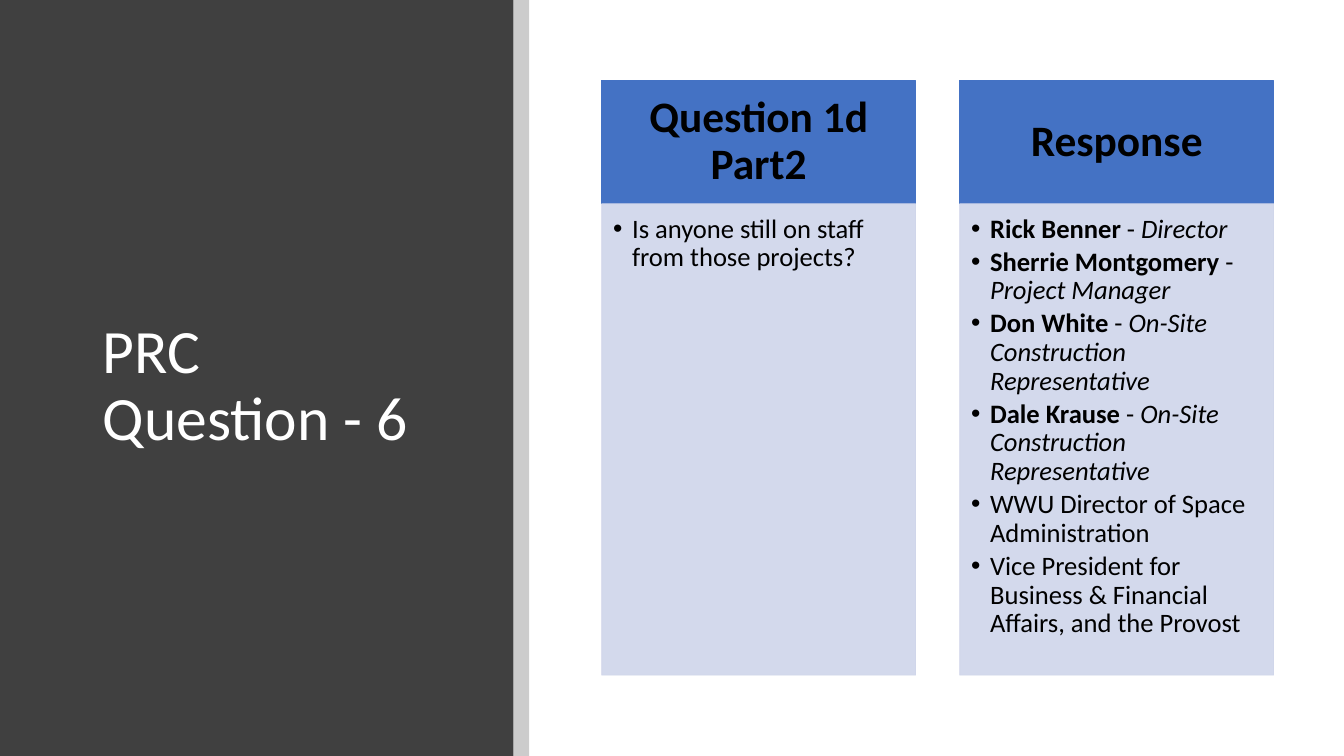
from dataclasses import dataclass

from lxml.etree import SubElement
from pptx import Presentation
from pptx.dml.color import RGBColor as RGB
from pptx.enum.shapes import MSO_SHAPE as Shape
from pptx.enum.text import MSO_ANCHOR as Anchor, MSO_AUTO_SIZE as Auto, PP_ALIGN as Align
from pptx.oxml.ns import qn
from pptx.util import Pt

PX = 9525  # EMU in one px, at 96 px to the inch
WIDE, HIGH = 1280, 720


@dataclass(frozen=True)
class Theme:
    font: str = "Calibri"
    dark: RGB = RGB(0x40, 0x40, 0x40)
    black: RGB = RGB(0, 0, 0)
    white: RGB = RGB(255, 255, 255)
    blue: RGB = RGB(0x44, 0x72, 0xC4)
    pale: RGB = RGB(0xCF, 0xD5, 0xEA)
    title: int = 44
    head: int = 31
    body: int = 19


THEME = Theme()

# Each entry is a name and a role; a plain entry has no name
STAFF = [
    ("Rick Benner ", "Director"),
    ("Sherrie Montgomery ", "Project Manager"),
    ("Don White ", "On-Site Construction Representative"),
    ("Dale Krause ", "On-Site Construction Representative"),
    ("", "WWU Director of Space Administration"),
    ("", "Vice President for Business & Financial Affairs, and the Provost"),
]
COLUMNS = [
    ("Question 1d Part2", [("", "Is anyone still on staff from those projects?")]),
    ("Response", STAFF),
]


def place(shape, x, y, w, h):
    shape.left, shape.top = x * PX, y * PX
    shape.width, shape.height = w * PX, h * PX


def fade(shape, share):
    """Make every colour set on the shape partly transparent."""
    for color in shape.element.spPr.iter(qn("a:srgbClr")):
        SubElement(color, qn("a:alpha"), val=str(share * 1000))


def paint(shape, color):
    shape.fill.solid()
    shape.fill.fore_color.rgb = color
    shape.line.color.rgb = color
    shape.line.width = Pt(0.5)


def add_band(slide, x, w, color):
    """Add a full-height band behind the placeholders."""
    band = slide.shapes.add_shape(Shape.RECTANGLE, x * PX, 0, w * PX, HIGH * PX)
    band.shadow.inherit = False
    band.fill.solid()
    band.fill.fore_color.rgb = color
    band.line.fill.background()
    slide.shapes.element.insert(2, band.element)
    return band


def set_frame(shape, anchor, pads):
    frame = shape.text_frame
    frame.word_wrap = True
    frame.auto_size = Auto.NONE
    frame.vertical_anchor = anchor
    (frame.margin_left, frame.margin_top,
     frame.margin_right, frame.margin_bottom) = [pad * PX for pad in pads]
    return frame


def set_para(para, size, color, align=Align.LEFT, bold=False, after=0):
    para.alignment = align
    para.line_spacing = 0.9
    para.space_before, para.space_after = Pt(0), Pt(after)
    font = para.font
    font.name, font.size, font.bold = THEME.font, Pt(size), bold
    font.color.rgb = color


def add_bullet(para):
    props = para._p.get_or_add_pPr()
    props.set("marL", str(18 * PX))
    props.set("indent", str(-18 * PX))
    SubElement(props, qn("a:buFont"), typeface="Arial")
    SubElement(props, qn("a:buChar"), char="•")


def add_run(para, text, bold=None, italic=None):
    run = para.add_run()
    run.text = text
    run.font.bold, run.font.italic = bold, italic


def fill_title(shape):
    place(shape, 88, 85, 350, 567)
    frame = set_frame(shape, Anchor.MIDDLE, (10, 5, 10, 5))
    frame.text = "PRC \vQuestion - 6"
    set_para(frame.paragraphs[0], THEME.title, THEME.white)


def fill_head(shape, x, text):
    place(shape, x, 77, 299, 117)
    paint(shape, THEME.blue)
    frame = set_frame(shape, Anchor.MIDDLE, (23, 13, 23, 13))
    frame.text = text
    set_para(frame.paragraphs[0], THEME.head, THEME.black, Align.CENTER, bold=True)


def fill_list(shape, x, items):
    place(shape, x, 194, 299, 449)
    paint(shape, THEME.pale)
    fade(shape, 90)
    frame = set_frame(shape, Anchor.TOP, (11, 11, 14, 16))
    for i, (name, role) in enumerate(items):
        para = frame.add_paragraph() if i else frame.paragraphs[0]
        add_bullet(para)
        set_para(para, THEME.body, THEME.black, after=3)
        if name:
            add_run(para, name, bold=True)
            add_run(para, "- ")
        add_run(para, role, italic=bool(name))


def main():
    deck = Presentation()
    deck.slide_width, deck.slide_height = WIDE * PX, HIGH * PX
    slide = deck.slides.add_slide(deck.slide_layouts.get_by_name("Comparison"))
    title, *boxes = slide.placeholders

    # Left panel with its title
    add_band(slide, 0, 489, THEME.dark)
    fade(add_band(slide, 489, 15, THEME.black), 20)
    fill_title(title)

    # Question and response columns
    pairs = zip(boxes[::2], boxes[1::2])
    for i, ((head, body), (text, items)) in enumerate(zip(pairs, COLUMNS)):
        x = 573 + i * 341
        fill_head(head, x, text)
        fill_list(body, x, items)

    deck.save("out.pptx")


if __name__ == "__main__":
    main()
